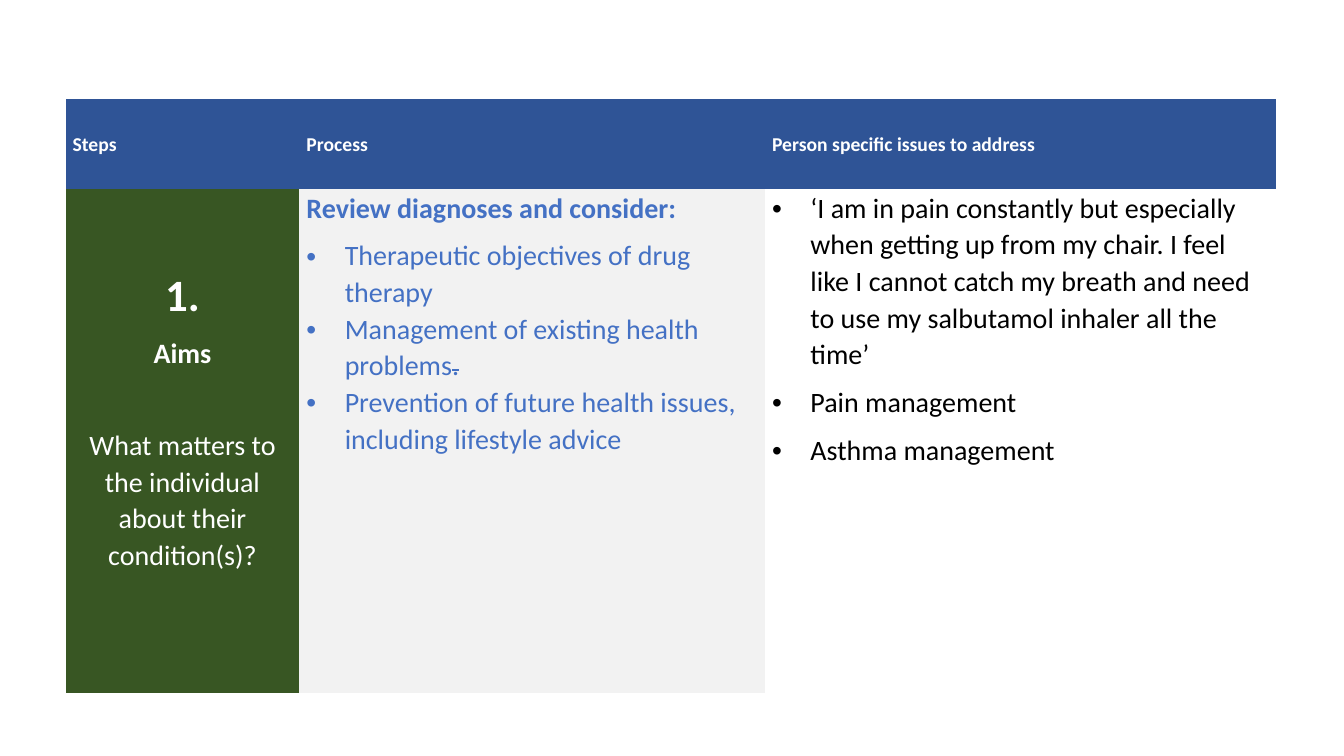
from dataclasses import dataclass

from lxml.etree import SubElement
from pptx import Presentation
from pptx.dml.color import RGBColor
from pptx.enum.text import MSO_ANCHOR as Anchor, PP_ALIGN as Align
from pptx.oxml.ns import qn
from pptx.util import Inches, Pt

NO_STYLE = "{2D5ABB26-0587-4C30-8999-92F81FD0307C}"


@dataclass(frozen=True)
class Theme:
    font: str = "Calibri"
    white: str = "FFFFFF"
    black: str = "000000"
    header: str = "2F5496"
    step: str = "385623"
    panel: str = "F2F2F2"
    process: str = "4471C4"
    label_size: int = 14
    body_size: int = 20
    number_size: int = 32
    line_spacing: float = 1.07
    gap: int = 8
    section_gap: float = 39.5
    indent: float = 0.38
    cell_margin: float = 0.07


class SlideBuilder:
    def __init__(self, presentation, theme):
        self.width = presentation.slide_width
        self.height = presentation.slide_height
        self.theme = theme
        self.slide = presentation.slides.add_slide(presentation.slide_layouts[6])

    def table(self, left, top, columns, rows):
        """Add an unstyled table; all lengths are percentages of the slide."""
        across, down = self.width / 100, self.height / 100
        frame = self.slide.shapes.add_table(
            len(rows), len(columns), int(left * across), int(top * down),
            int(sum(columns) * across), int(sum(rows) * down))
        table = frame.table
        table.horz_banding = False
        table._tbl.tblPr.find(qn("a:tableStyleId")).text = NO_STYLE
        for column, share in zip(table.columns, columns):
            column.width = int(share * across)
        for row, share in zip(table.rows, rows):
            row.height = int(share * down)
        return table

    def cell(self, cell, fill, anchor=Anchor.TOP, bottom=0):
        cell.fill.solid()
        cell.fill.fore_color.rgb = RGBColor.from_string(fill)
        cell.vertical_anchor = anchor
        cell.margin_left = cell.margin_right = Inches(self.theme.cell_margin)
        cell.margin_top, cell.margin_bottom = 0, Inches(bottom)
        return cell.text_frame

    def text(self, frame, text, color, size=None, bold=False, align=Align.LEFT,
             after=None, bullet=False):
        """Fill the empty first paragraph of the frame, or add another one."""
        theme = self.theme
        paragraph = frame.paragraphs[0]
        if paragraph.runs:
            paragraph = frame.add_paragraph()
        paragraph.add_run().text = text
        paragraph.alignment = align
        paragraph.line_spacing = theme.line_spacing
        paragraph.space_before = Pt(0)
        paragraph.space_after = Pt(theme.gap if after is None else after)
        if bullet:
            properties = paragraph._p.get_or_add_pPr()
            properties.set("marL", str(Inches(theme.indent)))
            properties.set("indent", str(-Inches(theme.indent)))
            SubElement(properties, qn("a:buFont"), typeface="Arial")
            SubElement(properties, qn("a:buChar"), char="•")
        font = paragraph.font
        font.name = theme.font
        font.size = Pt(size or theme.body_size)
        font.bold = bold
        font.color.rgb = RGBColor.from_string(color)
        return paragraph

    def struck(self, paragraph, text):
        """Append struck-through text to a paragraph."""
        run = paragraph.add_run()
        run.text = text
        run._r.get_or_add_rPr().set("strike", "sngStrike")


def main():
    theme = Theme()
    presentation = Presentation()
    presentation.slide_width = Inches(13.33)
    presentation.slide_height = Inches(7.5)
    builder = SlideBuilder(presentation, theme)
    table = builder.table(4.88, 13.1, (17.4, 34.65, 38), (11.9, 66.7))

    headings = ("Steps", "Process", "Person specific issues to address")
    for column, heading in enumerate(headings):
        frame = builder.cell(table.cell(0, column), theme.header, Anchor.MIDDLE)
        builder.text(frame, heading, theme.white, theme.label_size, bold=True)

    step = builder.cell(table.cell(1, 0), theme.step, Anchor.MIDDLE, bottom=0.44)
    builder.text(step, "1.", theme.white, theme.number_size, True, Align.CENTER)
    builder.text(step, "Aims", theme.white, bold=True, align=Align.CENTER,
                 after=theme.section_gap)
    builder.text(step, "What matters to the individual about their condition(s)?",
                 theme.white, align=Align.CENTER)

    process = builder.cell(table.cell(1, 1), theme.panel)
    builder.text(process, "Review diagnoses and consider:", theme.process, bold=True)
    for objective, struck in (
            ("Therapeutic objectives of drug therapy", ""),
            ("Management of existing health problems", "."),
            ("Prevention of future health issues, including lifestyle advice", "")):
        paragraph = builder.text(process, objective, theme.process, after=0, bullet=True)
        if struck:
            builder.struck(paragraph, struck)

    issues = builder.cell(table.cell(1, 2), theme.white)
    for issue in (
            "‘I am in pain constantly but especially when getting up from my chair. "
            "I feel like I cannot catch my breath and need to use my salbutamol "
            "inhaler all the time’",
            "Pain management",
            "Asthma management"):
        builder.text(issues, issue, theme.black, bullet=True)

    presentation.save("out.pptx")


if __name__ == "__main__":
    main()
